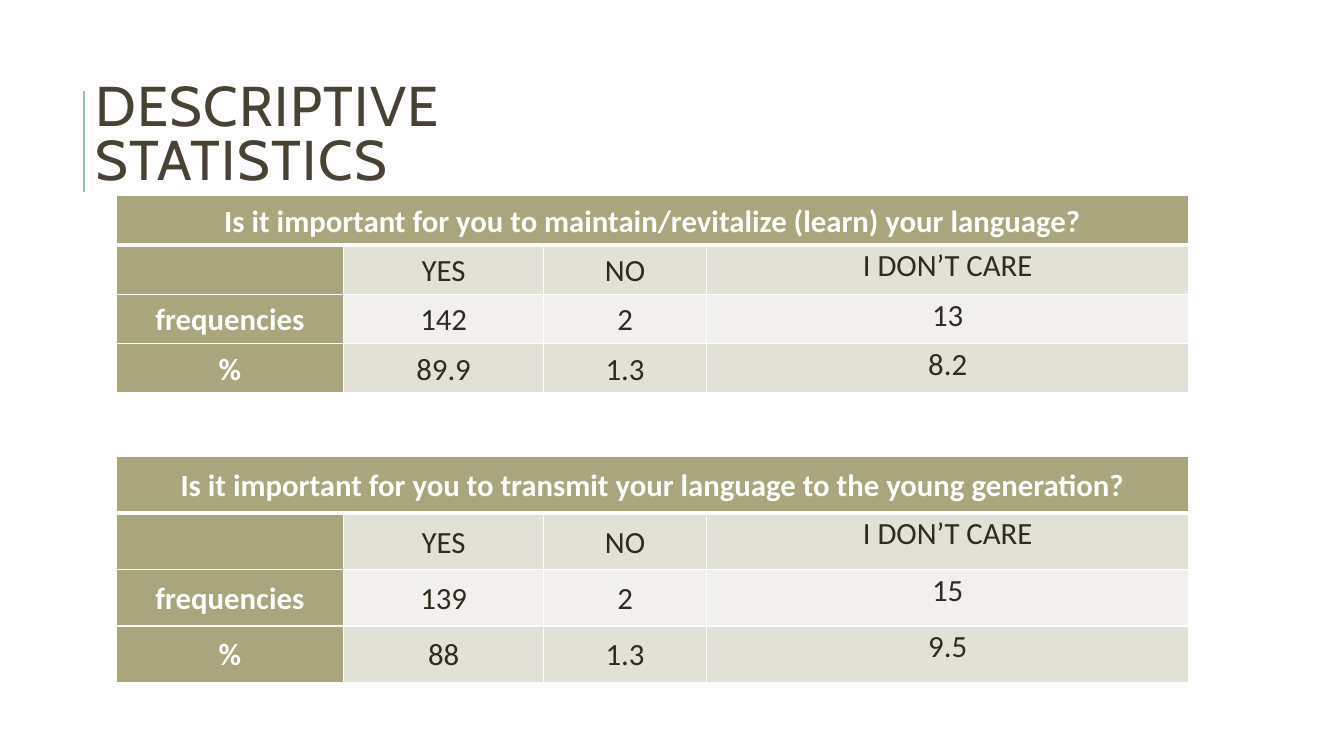
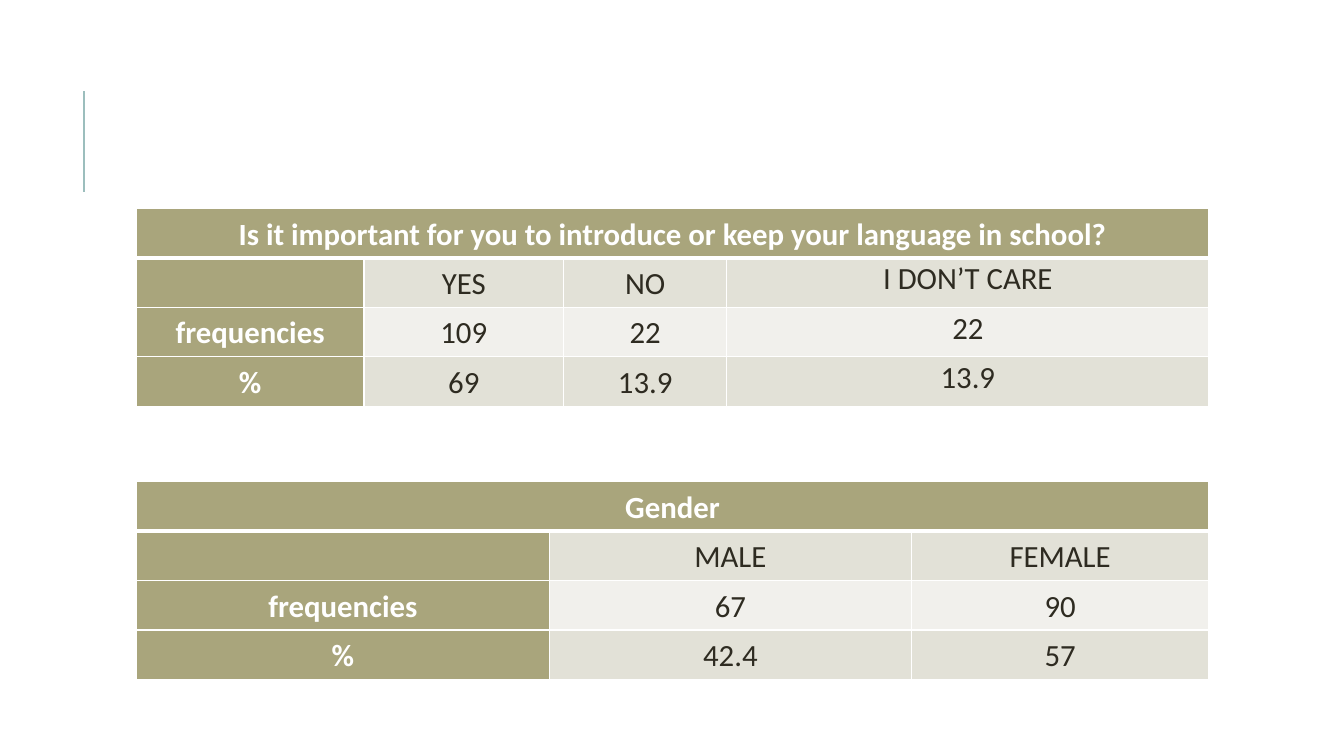
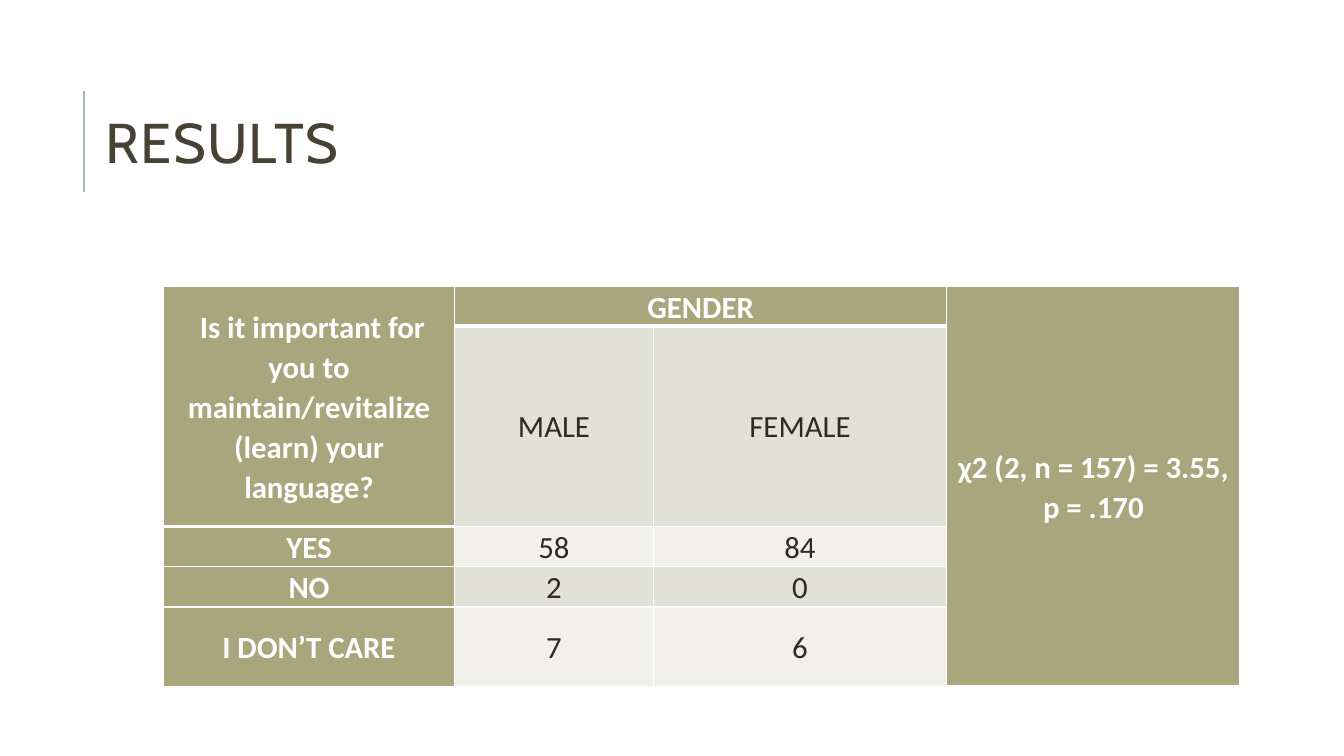
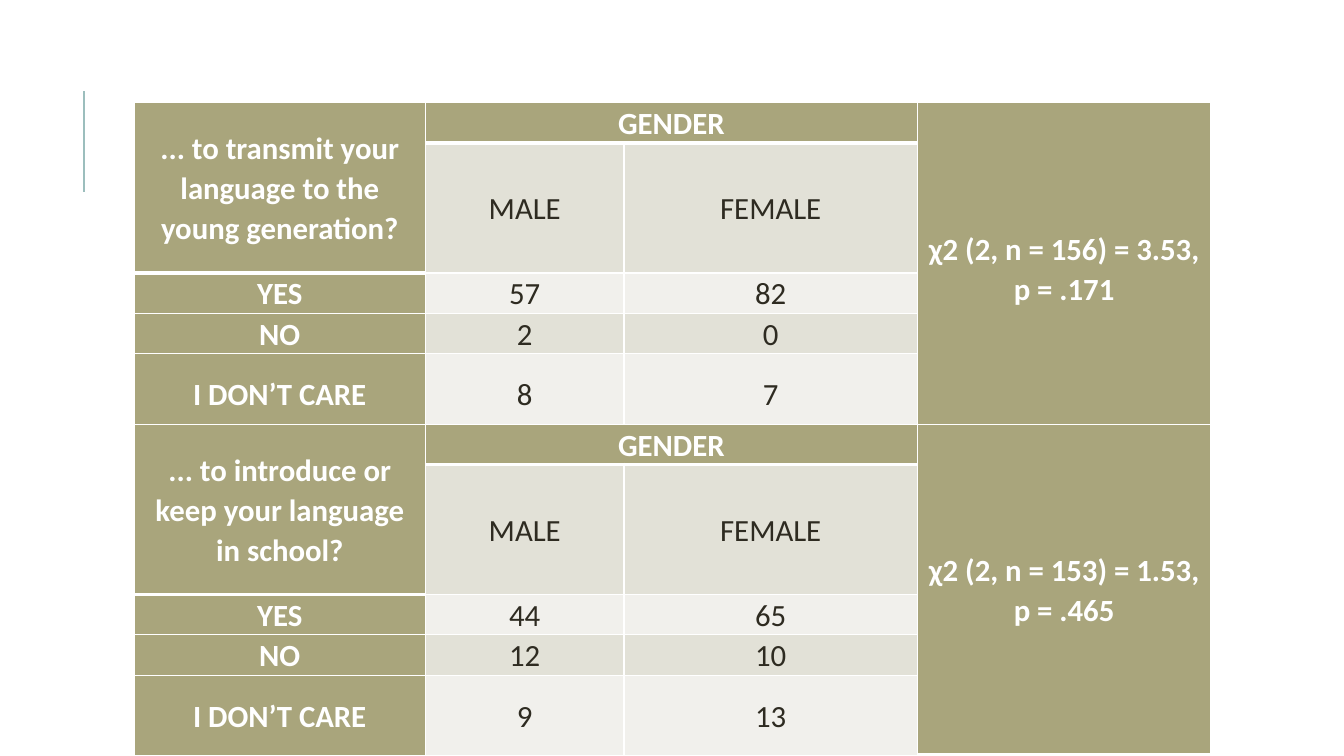
from dataclasses import dataclass

from lxml.etree import SubElement as Sub
from pptx import Presentation
from pptx.dml.color import RGBColor as Rgb
from pptx.enum.shapes import MSO_CONNECTOR as Conn
from pptx.enum.text import MSO_ANCHOR as Anchor, PP_ALIGN as Align
from pptx.oxml.ns import qn
from pptx.util import Inches, Pt


@dataclass(frozen=True)
class Theme:
    rule: str = "9CBEBD"
    title: str = "474233"
    ink: str = "2E2B21"
    white: str = "FFFFFF"
    head: str = "A9A57C"
    bands: tuple = ("F1F0EC", "E2E1D7")
    big: int = 40
    body: int = 22
    serif: str = "Cabin"
    sans: str = "Calibri"
    thin: float = 1
    thick: float = 3


LOOK = Theme()
POLL = (2.26, 1.98, 1.62, 4.78)
PAIR = (4.1, 3.59, 2.95)
CROSS = (2.89, 1.97, 2.91, 2.91)
CARE = "I DON’T CARE"


def tally(ask, names, counts, rates):
    gap = [None] * len(counts)
    return [[ask, *gap], ["", *names], ["frequencies", *counts], ["%", *rates]]


def survey(ask, counts, rates):
    return tally(ask, ["YES", "NO", CARE], counts, rates)


def split(ask, test, pairs):
    rows = [[ask, "GENDER", None, test], [None, "MALE", "FEMALE", None]]
    for name, pair in zip(("YES", "NO", CARE), pairs):
        rows.append([name, *pair, None])
    return rows


def flat(high):
    return (high,) * 4


def tall(high):
    return 0.39, high, 0.4, 0.4, 0.79


SLIDES = [
    {"title": ("DESCRIPTIVE STATISTICS", 0.85, 0.58), "tables": [
        (1.15, 1.94, POLL, flat(0.49), survey(
            "Is it important for you to maintain/revitalize (learn) your language?",
            ["142", "2", "13"], ["89.9", "1.3", "8.2"])),
        (1.15, 4.53, POLL, flat(0.56), survey(
            "Is it important for you to transmit your language to the young generation?",
            ["139", "2", "15"], ["88", "1.3", "9.5"])),
    ]},
    {"tables": [
        (1.35, 2.07, POLL, flat(0.49), survey(
            "Is it important for you to introduce or keep your language in school?",
            ["109", "22", "22"], ["69", "13.9", "13.9"])),
        (1.35, 4.78, PAIR, flat(0.49), tally(
            "Gender", ["MALE", "FEMALE"], ["67", "90"], ["42.4", "57"])),
    ]},
    {"title": ("RESULTS", 0.95, 0.68), "tables": [
        (1.62, 2.84, CROSS, tall(1.99), split(
            " Is it important for you to maintain/revitalize (learn) your language?",
            "χ2 (2, n = 157) = 3.55, p = .170",
            [("58", "84"), ("2", "0"), ("7", "6")])),
    ]},
    {"tables": [
        (1.33, 1.02, CROSS, tall(1.29), split(
            "... to transmit your language to the young generation?",
            "χ2 (2, n = 156) = 3.53, p = .171",
            [("57", "82"), ("2", "0"), ("8", "7")])),
        (1.33, 4.21, CROSS, tall(1.29), split(
            "... to introduce or keep your language in school?",
            "χ2 (2, n = 153) = 1.53, p = .465",
            [("44", "65"), ("12", "10"), ("9", "13")])),
    ]},
]


def style(para, size, face, color, space, bold=False):
    para.line_spacing = space
    font = para.font
    font.size, font.name, font.bold = Pt(size), face, bold
    font.color.rgb = Rgb.from_string(color)


def draw_rule(slide):
    x = Inches(0.83)
    line = slide.shapes.add_connector(Conn.STRAIGHT, x, Inches(1.9), x, Inches(0.9))
    line.line.color.rgb = Rgb.from_string(LOOK.rule)
    line.line.width = Pt(1.5)
    Sub(line._element.spPr, qn("a:effectLst"))


def draw_title(slide, text, left, top):
    box = slide.shapes.add_textbox(Inches(left), Inches(top), Inches(5.42), Inches(1.57))
    frame = box.text_frame
    frame.word_wrap = True
    frame.vertical_anchor = Anchor.MIDDLE
    para = frame.paragraphs[0]
    run = para.add_run()
    run.text = text
    run._r.get_or_add_rPr().set("spc", "100")
    style(para, LOOK.big, LOOK.serif, LOOK.title, 0.8)


def edge(cell, side, width):
    line = Sub(cell._tc.get_or_add_tcPr(), qn(f"a:ln{side}"), w=str(Pt(width)))
    fill = Sub(line, qn("a:solidFill"))
    Sub(fill, qn("a:srgbClr"), val=LOOK.white)


def draw_cell(cell, text, row, head, base, high):
    cell.margin_left = cell.margin_right = Inches(0.07)
    cell.margin_top = cell.margin_bottom = 0
    cell.vertical_anchor = Anchor.TOP if high else Anchor.MIDDLE
    edge(cell, "L", LOOK.thin)
    edge(cell, "R", LOOK.thin)
    if row == 0:
        edge(cell, "T", LOOK.thin)
    edge(cell, "B", LOOK.thick if base else LOOK.thin)
    cell.fill.solid()
    cell.fill.fore_color.rgb = Rgb.from_string(LOOK.head if head else LOOK.bands[row % 2])
    cell.text = text or ""
    para = cell.text_frame.paragraphs[0]
    para.alignment = Align.CENTER
    style(para, LOOK.body, LOOK.sans, LOOK.white if head else LOOK.ink, 1.07, head)


def draw_table(slide, left, top, cols, rows, cells):
    shape = slide.shapes.add_table(
        len(rows), len(cols), Inches(left), Inches(top),
        Inches(sum(cols)), Inches(sum(rows)))
    table = shape.table
    table.first_row = table.horz_banding = False
    for col, width in zip(table.columns, cols):
        col.width = Inches(width)
    for row, height in zip(table.rows, rows):
        row.height = Inches(height)
    for r, line in enumerate(cells):
        for c, text in enumerate(line):
            base = r == 0 or text is None
            head = base or c == 0
            high = cols == POLL and c == 3 and not head
            draw_cell(table.cell(r, c), text, r, head, base, high)
    if cols == CROSS:
        spans = [(0, 0, 1, 0), (0, 1, 0, 2), (0, 3, 4, 3)]
    else:
        spans = [(0, 0, 0, len(cols) - 1)]
    for r, c, end, last in spans:
        table.cell(r, c).merge(table.cell(end, last))


def main():
    deck = Presentation()
    deck.slide_width, deck.slide_height = Inches(13.33), Inches(7.5)
    for page in SLIDES:
        slide = deck.slides.add_slide(deck.slide_layouts[6])
        draw_rule(slide)
        if "title" in page:
            draw_title(slide, *page["title"])
        for table in page["tables"]:
            draw_table(slide, *table)
    deck.save("out.pptx")


if __name__ == "__main__":
    main()
